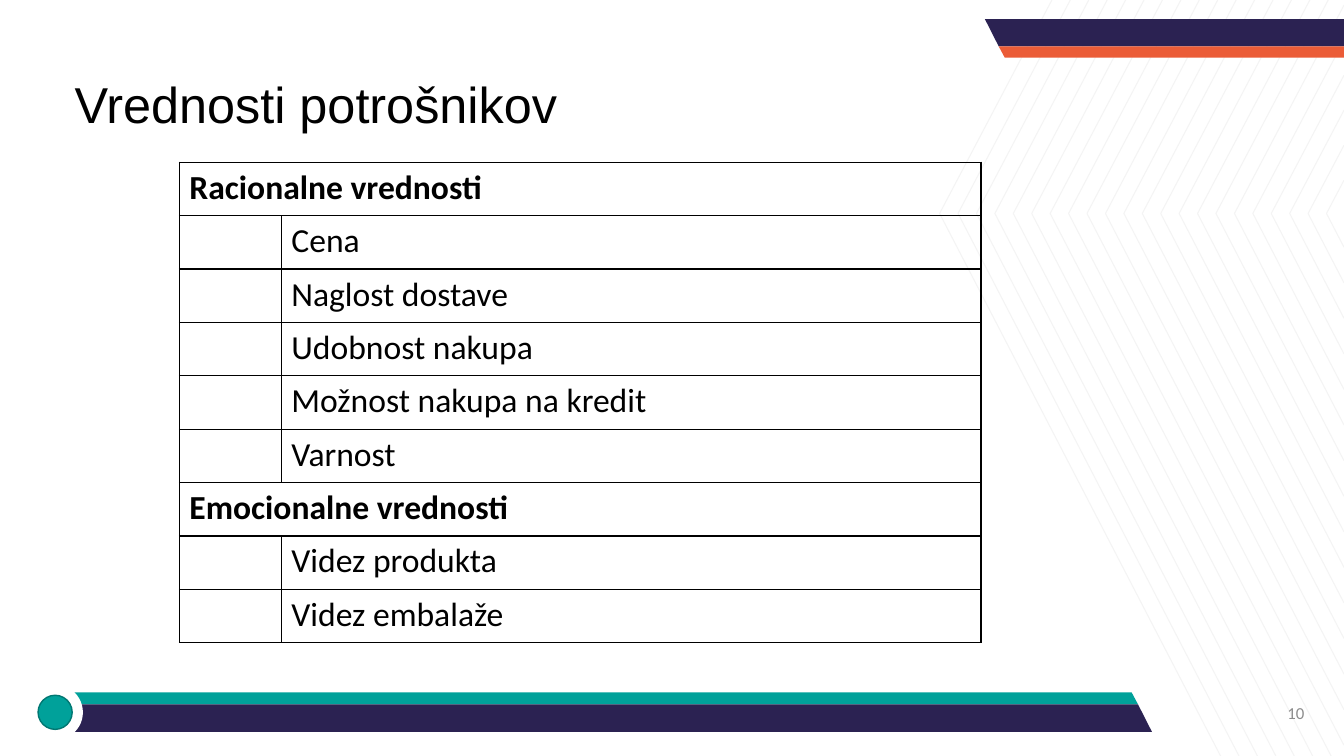
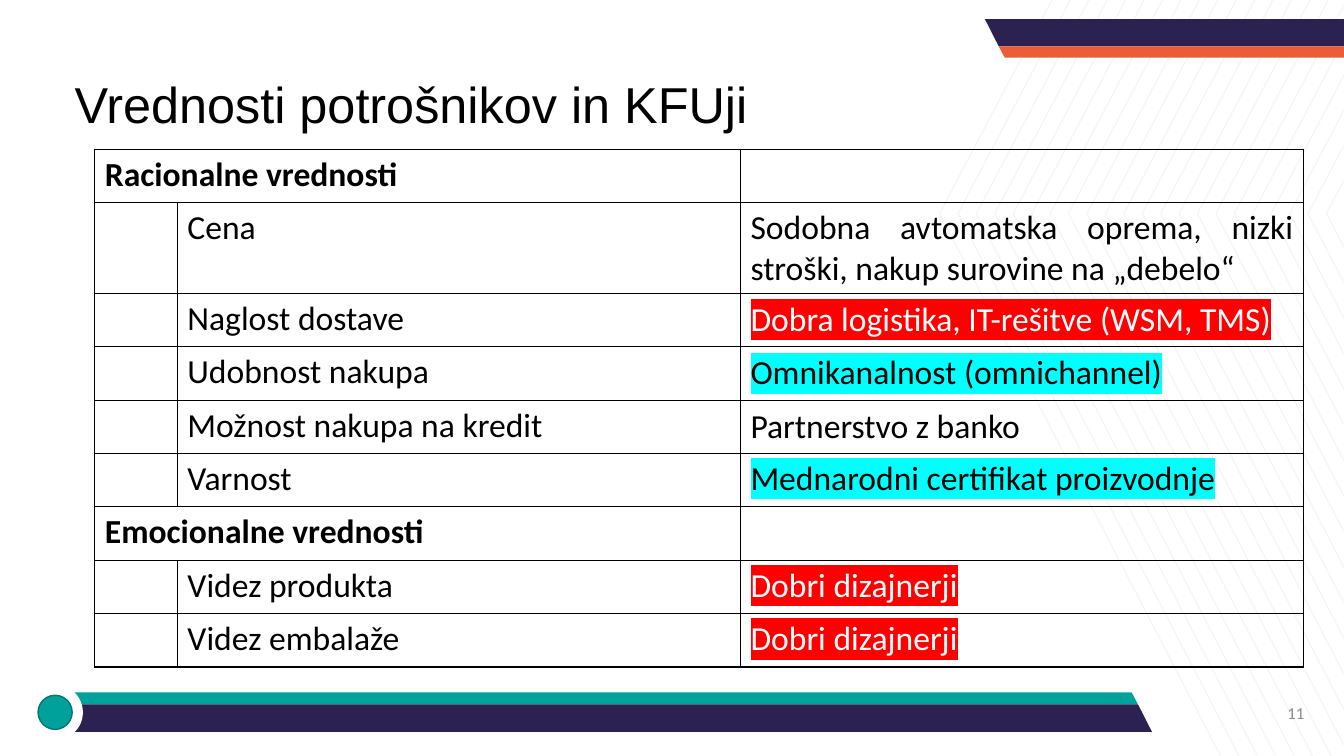
from lxml import etree
from pptx import Presentation
from pptx import util as u
from pptx.dml.color import RGBColor
from pptx.enum import shapes as es, text as et
from pptx.oxml import ns

WIDE, HIGH = 33.87, 19.05
HUES = {
    "ink": "000000", "paper": "FFFFFF", "navy": "2B2252", "teal": "00A19A",
    "rim": "007772", "coral": "EB5C37", "mist": "F4F4F4", "gray": "8C8C8C",
    "red": "FF0000", "cyan": "00FFFF",
}
GOALS = [
    ("Racionalne vrednosti", ["Cena", "Naglost dostave", "Udobnost nakupa",
                              "Možnost nakupa na kredit", "Varnost"]),
    ("Emocionalne vrednosti", ["Videz produkta", "Videz embalaže"]),
]
MID = et.MSO_ANCHOR.MIDDLE
TOP = et.MSO_ANCHOR.TOP
MEANS = {
    "Cena": ("Sodobna avtomatska oprema, nizki stroški, nakup surovine na „debelo“", None, MID),
    "Naglost dostave": ("Dobra logistika, IT-rešitve (WSM, TMS)", "red", MID),
    "Udobnost nakupa": ("Omnikanalnost (omnichannel)", "cyan", MID),
    "Možnost nakupa na kredit": ("Partnerstvo z banko", None, MID),
    "Varnost": ("Mednarodni certifikat proizvodnje", "cyan", TOP),
    "Videz produkta": ("Dobri dizajnerji", "red", TOP),
    "Videz embalaže": ("Dobri dizajnerji", "red", TOP),
}


def hue(name):
    return RGBColor.from_string(HUES[name])


def box(*sides):
    return [u.Cm(side) for side in sides]


def paint(shape, fill=None, line=None, width=1):
    shape.shadow.inherit = False
    if fill:
        shape.fill.solid()
        shape.fill.fore_color.rgb = hue(fill)
    else:
        shape.fill.background()
    if line:
        shape.line.color.rgb = hue(line)
        shape.line.width = u.Pt(width)
    else:
        shape.line.fill.background()
    return shape


def trace(shapes, dots, closed):
    ends = [(u.Cm(x), u.Cm(y)) for x, y in dots]
    pen = shapes.build_freeform(*ends[0])
    pen.add_line_segments(ends[1:], close=closed)
    return pen.convert_to_shape()


def weave(shapes, left, span, count):
    bend, rise, fall = 5.38, 2.83, 7.08
    for i in range(count):
        tip = left + span * i / (count - 1)
        up, down = min(rise, WIDE - tip), min(fall, WIDE - tip)
        dots = [(tip + up, bend * (1 - up / rise)), (tip, bend),
                (tip + down, bend + (HIGH - bend) * down / fall)]
        paint(trace(shapes, dots, False), line="mist", width=0.75)


def disc(shapes, mid, size, fill, line=None):
    x, y = mid
    oval = shapes.add_shape(es.MSO_SHAPE.OVAL, *box(x - size / 2, y - size / 2, size, size))
    paint(oval, fill, line)


def foot(shapes, left, top):
    seam, base = top + 0.3, top + 0.99
    teal = [(left, top), (left + 27.15, top), (left + 27.31, seam), (left, seam)]
    navy = [(left, seam), (left + 27.31, seam), (left + 27.66, base), (left, base)]
    paint(trace(shapes, teal, True), "teal")
    paint(trace(shapes, navy, True), "navy")
    mid = left + 0.02, top + 0.5
    disc(shapes, mid, 1.4, "paper")
    disc(shapes, mid, 0.86, "teal", "rim")


def crest(shapes, left, top):
    seam, base = top + 0.69, top + 0.97
    navy = [(left, top), (WIDE, top), (WIDE, seam), (left + 0.35, seam)]
    coral = [(left + 0.35, seam), (WIDE, seam), (WIDE, base), (left + 0.5, base)]
    paint(trace(shapes, navy, True), "navy")
    paint(trace(shapes, coral, True), "coral")


def share(slide, layout):
    shapes = slide.shapes
    weave(shapes, 23.68, 9.75, 22)
    foot(shapes, 1.37, 17.45)
    crest(shapes, 24.82, 0.48)
    for i, shape in enumerate(list(shapes)):
        if not shape.is_placeholder:
            shape.element.xpath(".//p:cNvPr")[0].set("id", str(100 + i))
            layout.shapes.element.append(shape.element)


def write(para, words, size, font="Calibri", color="ink", bold=False, mark=None):
    run = para.add_run()
    run.text = words
    face = run.font
    face.size, face.name, face.bold = u.Pt(size), font, bold
    face.color.rgb = hue(color)
    if mark:
        glow = etree.Element(ns.qn("a:highlight"))
        etree.SubElement(glow, ns.qn("a:srgbClr"), val=HUES[mark])
        run._r.rPr.find(ns.qn("a:latin")).addprevious(glow)


def bare(frame, anchor):
    frame.margin_left = frame.margin_right = frame.margin_top = frame.margin_bottom = 0
    frame.word_wrap = True
    frame.vertical_anchor = anchor
    return frame.paragraphs[0]


def head(slide, words, page):
    title = slide.shapes.title
    title.left, title.top, title.width, title.height = box(1.88, 2.01, 30.18, 1.4)
    para = bare(title.text_frame, TOP)
    para.alignment = et.PP_ALIGN.LEFT
    para.line_spacing = 0.9
    write(para, words, 36, "Arial")
    note = slide.shapes.add_textbox(*box(31.04, 17.7, 1.83, 0.51))
    para = bare(note.text_frame, MID)
    para.alignment = et.PP_ALIGN.RIGHT
    write(para, str(page), 12, color="gray")


def edge(cell):
    cell.fill.background()
    props = cell._tc.get_or_add_tcPr()
    for i, side in enumerate(("lnL", "lnR", "lnT", "lnB")):
        line = etree.Element(ns.qn("a:" + side), w=str(u.Pt(1)))
        fill = etree.SubElement(line, ns.qn("a:solidFill"))
        etree.SubElement(fill, ns.qn("a:srgbClr"), val=HUES["ink"])
        props.insert(i, line)


def put(cell, words, bold=False, mark=None, anchor=TOP):
    cell.vertical_anchor = anchor
    para = cell.text_frame.paragraphs[0]
    para.alignment = et.PP_ALIGN.JUSTIFY
    write(para, words, 24, color="paper" if mark == "red" else "ink", bold=bold, mark=mark)


def grid(slide, left, top, cols, means=None):
    rows = [pair for group, items in GOALS
            for pair in [(group, True)] + [(item, False) for item in items]]
    frame = slide.shapes.add_table(len(rows), len(cols), *box(left, top, sum(cols), 12.11))
    table = frame.table
    table.first_row = table.horz_banding = False
    for col, width in zip(table.columns, cols):
        col.width = u.Cm(width)
    for cell in table.iter_cells():
        edge(cell)
    for i, (words, group) in enumerate(rows):
        if group:
            table.cell(i, 0).merge(table.cell(i, 1))
        put(table.cell(i, 0 if group else 1), words, group)
        if means and not group:
            reply, mark, anchor = means[words]
            put(table.cell(i, 2), reply, mark=mark, anchor=anchor)


def main():
    deck = Presentation()
    deck.slide_width, deck.slide_height = box(WIDE, HIGH)
    layout = deck.slide_layouts[5]
    plans = [
        ("Vrednosti potrošnikov", 4.52, 4.09, [2.57, 17.63], None),
        ("Vrednosti potrošnikov in KFUji", 2.39, 3.76, [2.08, 14.19, 14.19], MEANS),
    ]
    for page, (title, left, top, cols, means) in enumerate(plans, 10):
        slide = deck.slides.add_slide(layout)
        if page == 10:
            share(slide, layout)
        head(slide, title, page)
        grid(slide, left, top, cols, means)
    deck.save("out.pptx")


if __name__ == "__main__":
    main()
